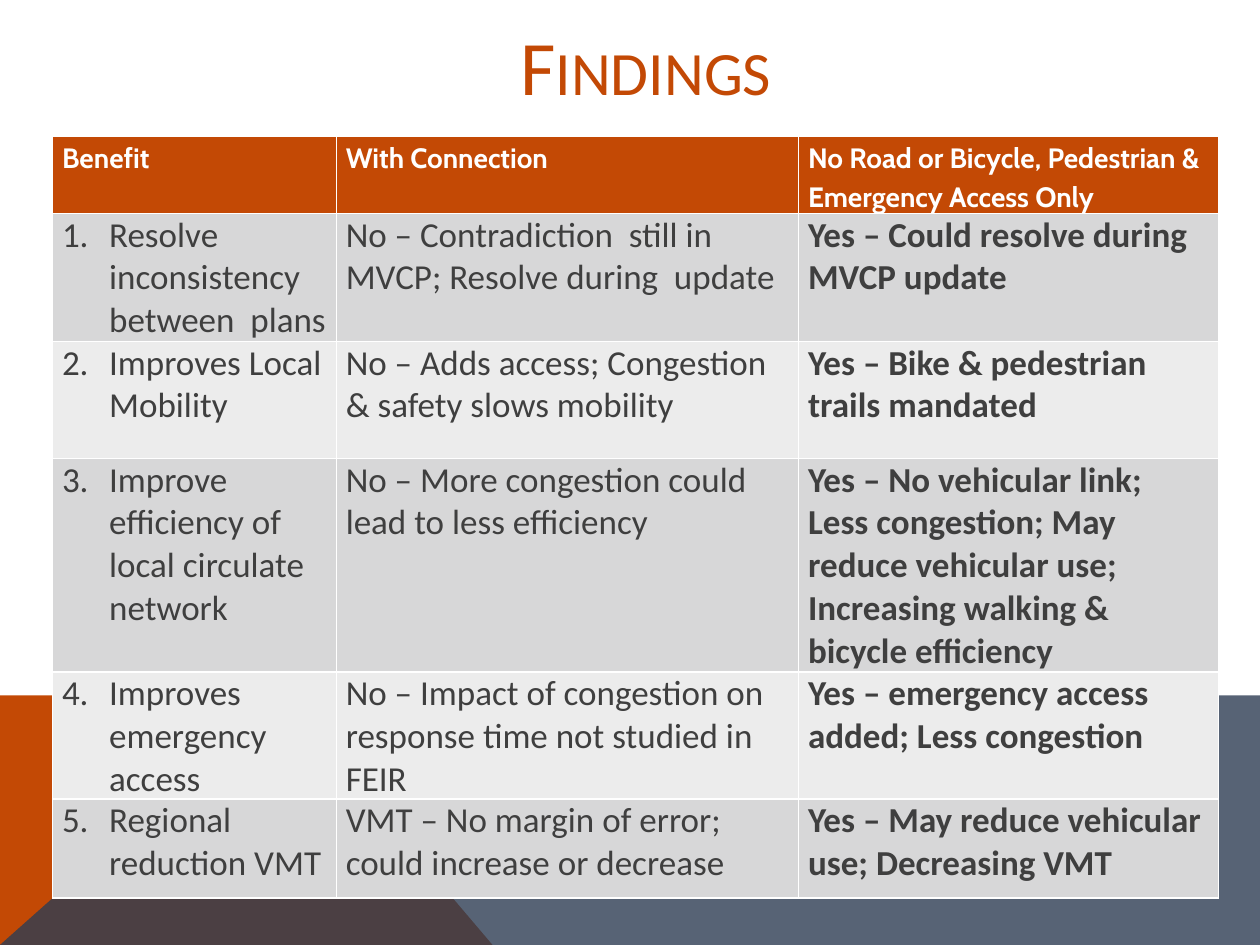
"""Build the Findings slide: a benefit table over a two-tone footer."""
from lxml import etree
from pptx import Presentation
from pptx import util as u
from pptx.dml.color import RGBColor
from pptx.enum import text
from pptx.oxml.ns import qn


def paint(fill, hue):
    fill.solid()
    fill.fore_color.rgb = RGBColor.from_string(hue)


def write(para, words, font, size, hue, bold=False):
    run = para.add_run()
    run.text = words
    run.font.name = font
    run.font.size = u.Pt(size)
    run.font.bold = bold
    paint(run.font.fill, hue)
    return run


RUST, SLATE, INK, WHITE = "C34905", "2D3D53", "3F3F3F", "FFFFFF"
BANDS = ["ECECEC", "D7D7D8"]

deck = Presentation()
deck.slide_width, deck.slide_height = u.Cm(25.4), u.Cm(19.05)
slide = deck.slides.add_slide(deck.slide_layouts[6])

top, base, peak = 14.02, 19.05, 5.66
wedges = [
    (RUST, [(0, base), (0, top), (peak, top), (9.93, base)]),
    (SLATE, [(0, base), (peak, top), (25.4, top), (25.4, base)]),
]
for hue, spots in wedges:
    spots = [(u.Cm(x), u.Cm(y)) for x, y in spots]
    pen = slide.shapes.build_freeform(*spots[0], scale=1.0)
    pen.add_line_segments(spots[1:], close=True)
    wedge = pen.convert_to_shape()
    wedge.shadow.inherit = False
    wedge.line.fill.background()
    paint(wedge.fill, hue)
tint = wedge.fill._xPr.find(".//" + qn("a:srgbClr"))
etree.SubElement(tint, qn("a:alpha"), val="80000")

box = slide.shapes.add_textbox(u.Cm(1.27), u.Cm(0.2), u.Cm(23.5), u.Cm(2.21))
frame = box.text_frame
frame.word_wrap = True
frame.vertical_anchor = text.MSO_ANCHOR.MIDDLE
title = frame.paragraphs[0]
title.alignment = text.PP_ALIGN.CENTER
run = write(title, "Findings", "Calibri", 44, RUST)
run.font._element.set("cap", "small")

rows = [
    ("Benefit", "With Connection",
     "No Road or Bicycle, Pedestrian & Emergency Access Only"),
    ("Resolve inconsistency between  plans",
     "No – Contradiction  still in MVCP; Resolve during  update",
     "Yes – Could resolve during MVCP update"),
    ("Improves Local Mobility",
     "No – Adds access; Congestion & safety slows mobility",
     "Yes – Bike & pedestrian trails mandated"),
    ("Improve efficiency of local circulate network",
     "No – More congestion could lead to less efficiency",
     "Yes – No vehicular link; Less congestion; May reduce vehicular use; "
     "Increasing walking & bicycle efficiency"),
    ("Improves emergency access",
     "No – Impact of congestion on response time not studied in FEIR",
     "Yes – emergency access added; Less congestion"),
    ("Regional reduction VMT",
     "VMT – No margin of error; could increase or decrease",
     "Yes – May reduce vehicular use; Decreasing VMT"),
]
wides = [5.72, 9.32, 8.46]
talls = [1.55, 2.58, 2.36, 4.3, 2.56, 2.0]
grid = slide.shapes.add_table(
    len(rows), len(wides), u.Cm(1.06), u.Cm(2.75),
    u.Cm(sum(wides)), u.Cm(sum(talls))).table
for col, wide in zip(grid.columns, wides):
    col.width = u.Cm(wide)
for r, (row, tall) in enumerate(zip(rows, talls)):
    grid.rows[r].height = u.Cm(tall)
    for c, words in enumerate(row):
        cell = grid.cell(r, c)
        cell.margin_left = cell.margin_right = u.Cm(0.19)
        cell.margin_top = cell.margin_bottom = 0
        paint(cell.fill, BANDS[r % 2] if r else RUST)
        para = cell.text_frame.paragraphs[0]
        if r == 0:
            para.line_spacing = 1.15
            write(para, words, "Cabin", 16, WHITE, True)
            continue
        para.space_before = para.space_after = u.Pt(4)
        write(para, words, "Calibri", 20, INK, c == 2)
        if c == 0:
            props = para._p.get_or_add_pPr()
            props.set("marL", str(u.Cm(0.95)))
            props.set("indent", str(-u.Cm(0.95)))
            etree.SubElement(props, qn("a:buAutoNum"),
                             type="arabicPeriod", startAt=str(r))

deck.save("out.pptx")
